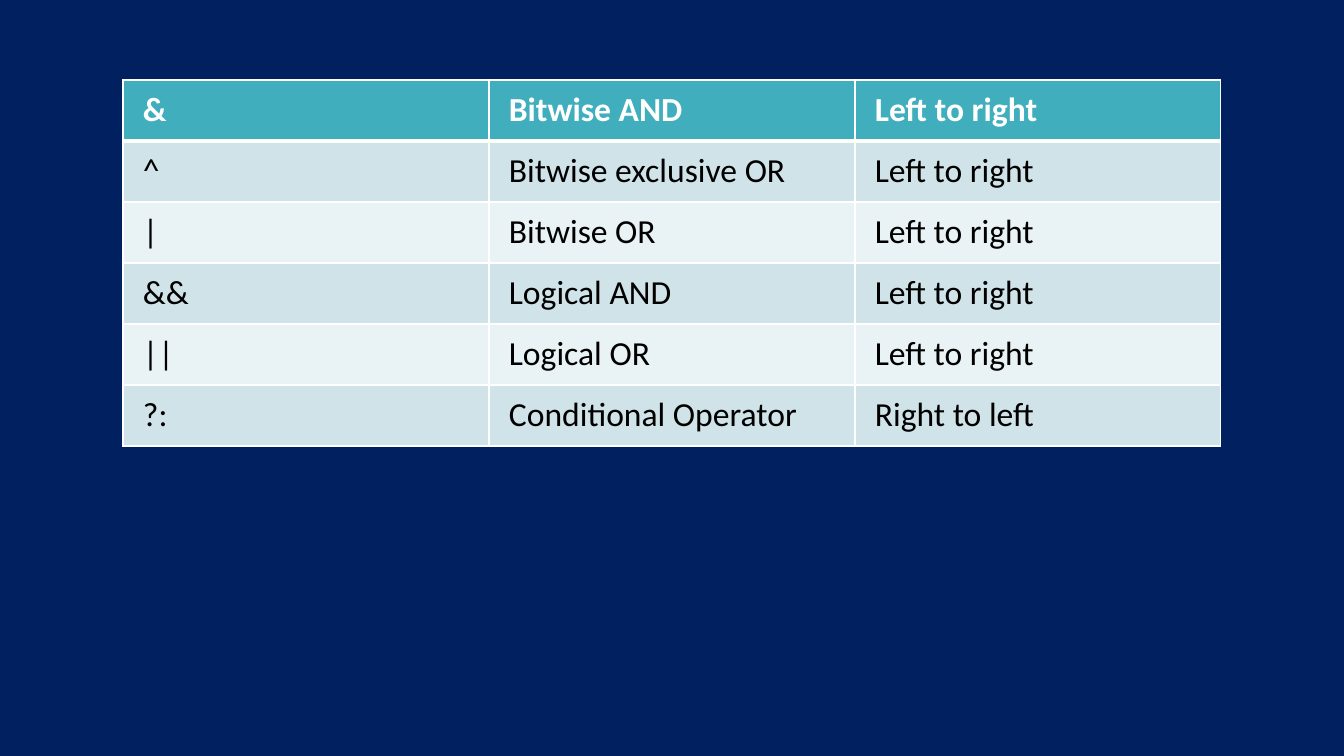
from lxml.etree import SubElement
from pptx import Presentation
from pptx.dml.color import RGBColor
from pptx.enum.text import MSO_ANCHOR
from pptx.oxml.ns import qn
from pptx.util import Pt

PX = 914400 / 100.8


def px(n):
    return round(n * PX)


def color(fmt, hex_color):
    if hasattr(fmt, "solid"):
        fmt.solid()
        fmt = fmt.fore_color
    fmt.rgb = RGBColor.from_string(hex_color)


operators = [
    ("&", "Bitwise AND", "Left to right"),
    ("^", "Bitwise exclusive OR", "Left to right"),
    ("|", "Bitwise OR", "Left to right"),
    ("&&", "Logical AND", "Left to right"),
    ("||", "Logical OR", "Left to right"),
    ("?:", "Conditional Operator", "Right to left"),
]

# Slide
prs = Presentation()
prs.slide_width, prs.slide_height = px(1344), px(756)
s = prs.slides.add_slide(prs.slide_layouts[6])
color(s.background.fill, "002060")

# Operator table
ROW_H, COL_W = 61, 366
table = s.shapes.add_table(len(operators), 3, px(123), px(80),
                           px(3 * COL_W), px(len(operators) * ROW_H)).table
for col in table.columns:
    col.width = px(COL_W)
for row in table.rows:
    row.height = px(ROW_H)

for i, texts in enumerate(operators):
    header = i == 0
    fill = "41AEBD" if header else ("E9F2F4", "CFE3E8")[i % 2]
    for j, text in enumerate(texts):
        cell = table.cell(i, j)
        cell.vertical_anchor = MSO_ANCHOR.MIDDLE
        cell.margin_left = cell.margin_right = px(20)
        cell.margin_top = cell.margin_bottom = px(10)

        # White borders, with a heavier rule under the header
        widths = {"L": 1, "R": 1, "T": 3 if i == 1 else 1, "B": 3 if header else 1}
        tcPr = cell._tc.get_or_add_tcPr()
        for side, width in widths.items():
            ln = SubElement(tcPr, qn("a:ln" + side), w=str(Pt(width)))
            SubElement(SubElement(ln, qn("a:solidFill")), qn("a:srgbClr"), val="FFFFFF")
        color(cell.fill, fill)

        # Text
        cell.text_frame.text = text
        font = cell.text_frame.paragraphs[0].runs[0].font
        font.name, font.size, font.bold = "Calibri", Pt(24), header
        color(font.color, "FFFFFF" if header else "000000")

prs.save("out.pptx")
